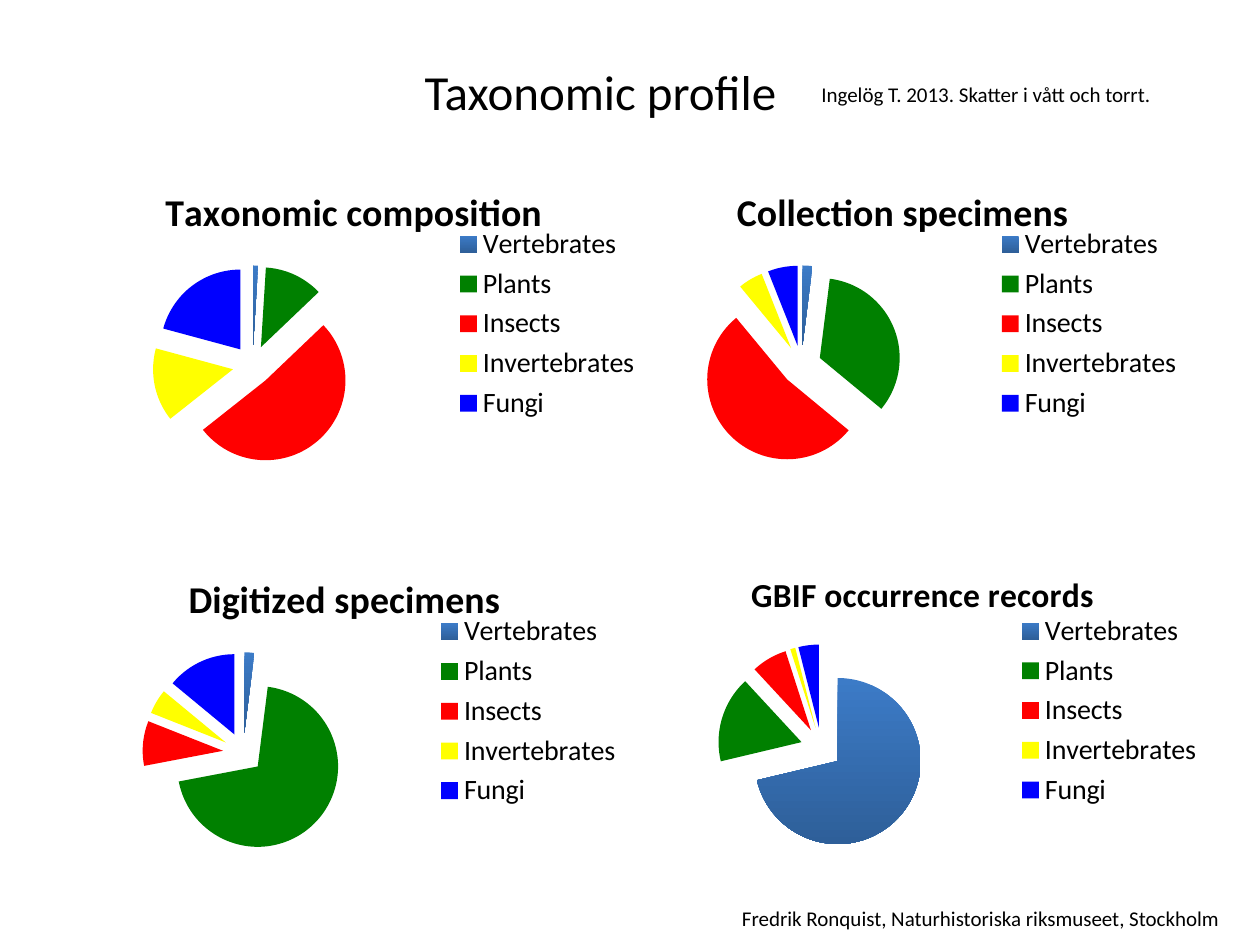
import pptx
import pptx.chart.data
import pptx.dml.color
import pptx.enum.chart
import pptx.enum.text
import pptx.oxml
import pptx.oxml.ns
import pptx.util

Inches, Pt = pptx.util.Inches, pptx.util.Pt
RGBColor = pptx.dml.color.RGBColor

BLACK = RGBColor(0x00, 0x00, 0x00)
LIGHT_BLUE = RGBColor(0x3C, 0x7B, 0xC7)
DARK_BLUE = RGBColor(0x2E, 0x5F, 0x99)
GREEN = RGBColor(0x00, 0x80, 0x00)
RED = RGBColor(0xFF, 0x00, 0x00)
YELLOW = RGBColor(0xFF, 0xFF, 0x00)
BLUE = RGBColor(0x00, 0x00, 0xFF)

FONT = "Calibri"
EXPLOSION = 25
HEADING = ("Taxonomic profile", (3.27, 0.44, 3.39, 0.57), 28, True)
CREDITS = [
    ("Ingelög T. 2013. Skatter i vått och torrt.", (6.42, 0.6, 3.09, 0.3), 12, False),
    ("Fredrik Ronquist, Naturhistoriska riksmuseet, Stockholm",
     (5.79, 7.14, 4.09, 0.3), 12, True),
]
GROUPS = {
    "Vertebrates": (LIGHT_BLUE, DARK_BLUE),
    "Plants": (GREEN,),
    "Insects": (RED,),
    "Invertebrates": (YELLOW,),
    "Fungi": (BLUE,),
}
TOP_ROW, BOTTOM_ROW = 1.31, 4.38
PROFILES = [
    ("Collection specimens", (4.84, TOP_ROW, 4.65, 2.52), 21.6, (2, 34, 53, 5, 6)),
    ("GBIF occurrence records", (5, BOTTOM_ROW, 4.65, 2.52), 19.2, (72, 17, 7, 1, 4)),
    ("Taxonomic composition", (0.43, TOP_ROW, 4.76, 2.52), 21.6, (1, 12, 52, 15, 21)),
    ("Digitized specimens", (0.43, BOTTOM_ROW, 4.61, 2.53), 21.6, (2, 70, 9, 5, 14)),
]


def style_font(font, size, bold=False):
    for name, value in {"name": FONT, "size": Pt(size), "bold": bold}.items():
        setattr(font, name, value)
    font.color.rgb = BLACK


def write_text(holder, text, size, wrap):
    frame = holder.text_frame
    frame_format = {
        "text": text,
        "word_wrap": wrap,
        "auto_size": pptx.enum.text.MSO_AUTO_SIZE.SHAPE_TO_FIT_TEXT,
        "vertical_anchor": pptx.enum.text.MSO_ANCHOR.TOP,
    }
    for name, value in frame_format.items():
        setattr(frame, name, value)
    line = frame.paragraphs[0]
    line.alignment = pptx.enum.text.PP_ALIGN.LEFT
    style_font(line.runs[0].font, size)


def color_slice(fill, colors):
    if len(colors) == 1:
        fill.solid()
        fill.fore_color.rgb = colors[0]
        return
    fill.gradient()
    fill.gradient_angle = 270
    for stop, color in zip(fill.gradient_stops, colors):
        stop.color.rgb = color


def explode(series):
    explosion = pptx.oxml.parse_xml(
        f'<c:explosion {pptx.oxml.ns.nsdecls("c")} val="{EXPLOSION}"/>')
    series._element.find(pptx.oxml.ns.qn("c:tx")).addnext(explosion)


def add_profile(slide, title, box, title_size, shares):
    data = pptx.chart.data.CategoryChartData()
    data.categories = list(GROUPS)
    data.add_series("Series 1", shares)
    chart = slide.shapes.add_chart(
        pptx.enum.chart.XL_CHART_TYPE.PIE, *map(Inches, box), data).chart
    style_font(chart.font, 16)

    chart.has_title = True
    chart.chart_title.include_in_layout = False
    heading = chart.chart_title.text_frame
    heading.text = title
    style_font(heading.paragraphs[0].runs[0].font, title_size, bold=True)

    chart.has_legend = True
    legend_format = {
        "position": pptx.enum.chart.XL_LEGEND_POSITION.RIGHT,
        "include_in_layout": False,
    }
    for name, value in legend_format.items():
        setattr(chart.legend, name, value)
    style_font(chart.legend.font, 16)

    pie = chart.plots[0]
    pie.vary_by_categories = True
    series = pie.series[0]
    explode(series)
    for index, colors in enumerate(GROUPS.values()):
        color_slice(series.points[index].format.fill, colors)


def main():
    deck = pptx.Presentation()
    deck.slide_width, deck.slide_height = Inches(10), Inches(7.5)
    slide = deck.slides.add_slide(deck.slide_layouts[5])

    text, box, size, wrap = HEADING
    heading = slide.shapes.title
    for name, value in zip(("left", "top", "width", "height"), box):
        setattr(heading, name, Inches(value))
    write_text(heading, text, size, wrap)

    for profile in PROFILES:
        add_profile(slide, *profile)
    for text, box, size, wrap in CREDITS:
        write_text(slide.shapes.add_textbox(*map(Inches, box)), text, size, wrap)

    deck.save("out.pptx")


if __name__ == "__main__":
    main()
